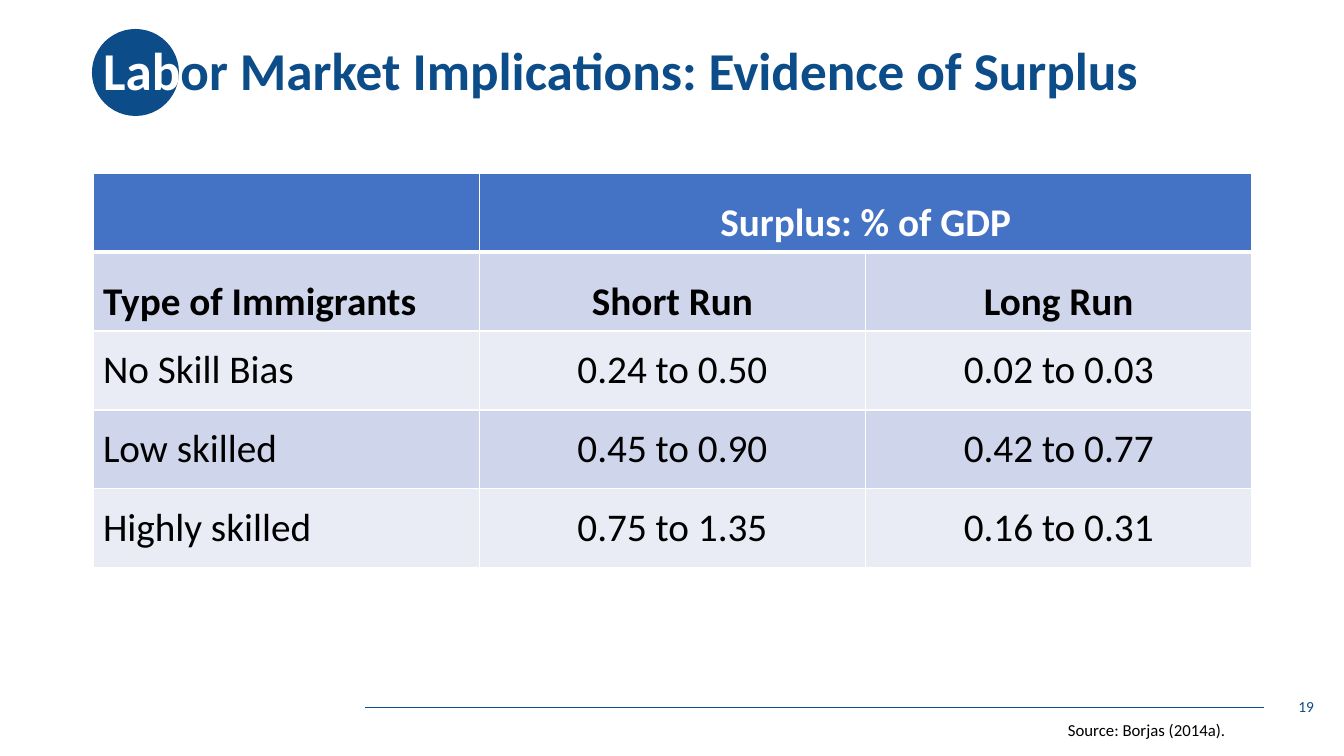
from pptx import Presentation
from pptx import util as u
from pptx.dml.color import RGBColor
from pptx.enum import shapes, text
from pptx.oxml import parse_xml
from pptx.oxml import ns

SCALE = 914400 / 100.8  # EMU per px
FONT = "Calibri"
NAVY = RGBColor(0x0C, 0x4C, 0x88)
HEADER_BLUE = RGBColor(0x44, 0x72, 0xC4)
BAND_DARK = RGBColor(0xCF, 0xD5, 0xEA)
BAND_LIGHT = RGBColor(0xE9, 0xEB, 0xF5)
WHITE = RGBColor(0xFF, 0xFF, 0xFF)
BLACK = RGBColor(0, 0, 0)

ROWS = [
    ["", "Surplus: % of GDP", ""],
    ["Type of Immigrants", "Short Run", "Long Run"],
    ["No Skill Bias", "0.24 to 0.50", "0.02 to 0.03"],
    ["Low skilled", "0.45 to 0.90", "0.42 to 0.77"],
    ["Highly skilled", "0.75 to 1.35", "0.16 to 0.31"],
]


def px(*lengths):
    return [u.Emu(round(length * SCALE)) for length in lengths]


def style(font, size, color, bold=False):
    font.name, font.size, font.bold = FONT, u.Pt(size), bold
    font.color.rgb = color


def add_title(slide, left, top, width, height):
    # Disc behind the first letters
    disc = slide.shapes.add_shape(
        shapes.MSO_SHAPE.OVAL, *px(left - 1, top + 29, 87, 87))
    disc.shadow.inherit = False
    disc.fill.solid()
    disc.fill.fore_color.rgb = NAVY
    disc.line.fill.background()

    # Title, moved in front of the disc
    title = slide.shapes.title
    title.left, title.top, title.width, title.height = px(left, top, width, height)
    disc._element.addnext(title._element)
    frame = title.text_frame
    frame.auto_size = text.MSO_AUTO_SIZE.NONE
    frame.vertical_anchor = text.MSO_ANCHOR.MIDDLE
    paragraph = frame.paragraphs[0]
    paragraph.alignment = text.PP_ALIGN.LEFT
    paragraph.line_spacing = 0.9
    for words, color in [("Lab", WHITE),
                         ("or Market Implications: Evidence of Surplus", NAVY)]:
        run = paragraph.add_run()
        run.text = words
        style(run.font, 38, color, True)


def set_borders(cell, bottom_points):
    properties = cell._tc.get_or_add_tcPr()
    for side, points in [("L", 1), ("R", 1), ("T", 1), ("B", bottom_points)]:
        properties.append(parse_xml(
            f'<a:ln{side} {ns.nsdecls("a")} w="{u.Pt(points)}"><a:solidFill>'
            f'<a:srgbClr val="{WHITE}"/></a:solidFill></a:ln{side}>'))


def add_surplus_table(slide, left, top, width, height):
    frame = slide.shapes.add_table(
        len(ROWS), len(ROWS[0]), *px(left, top, width, height))
    table = frame.table
    for row_index, row in enumerate(ROWS):
        header = row_index == 0
        heading = row_index < 2
        band = BAND_DARK if row_index % 2 else BAND_LIGHT
        for column_index, words in enumerate(row):
            cell = table.cell(row_index, column_index)
            set_borders(cell, 3 if header else 1)
            cell.fill.solid()
            cell.fill.fore_color.rgb = HEADER_BLUE if header else band
            cell.vertical_anchor = (
                text.MSO_ANCHOR.BOTTOM if heading else text.MSO_ANCHOR.MIDDLE)
            cell.text = words
            paragraph = cell.text_frame.paragraphs[0]
            paragraph.alignment = (
                text.PP_ALIGN.CENTER if column_index else text.PP_ALIGN.LEFT)
            style(paragraph.font, 28, WHITE if header else BLACK, heading)
            for run in paragraph.runs:
                style(run.font, 28, WHITE if header else BLACK, heading)
    table.cell(0, 1).merge(table.cell(0, 2))


def add_label(slide, box, words, size, color, alignment, anchor):
    label = slide.shapes.add_textbox(*px(*box))
    frame = label.text_frame
    frame.word_wrap = True
    frame.vertical_anchor = anchor
    frame.text = words
    paragraph = frame.paragraphs[0]
    paragraph.alignment = alignment
    style(paragraph.runs[0].font, size, color)


def add_footer(slide, left, top, width):
    # Rule
    rule = slide.shapes.add_connector(
        shapes.MSO_CONNECTOR.STRAIGHT, *px(left, top, left + width, top))
    rule.line.color.rgb = NAVY
    rule.line.width = u.Pt(0.5)
    rule._element.spPr.append(parse_xml(f'<a:effectLst {ns.nsdecls("a")}/>'))

    # Page number and source
    add_label(slide, (left + 657, top - 21, 302, 40), "19", 11, NAVY,
              text.PP_ALIGN.RIGHT, text.MSO_ANCHOR.MIDDLE)
    add_label(slide, (left + 693, top + 8, 194, 30), "Source: Borjas (2014a).",
              12, BLACK, text.PP_ALIGN.LEFT, text.MSO_ANCHOR.TOP)


def main():
    presentation = Presentation()
    presentation.slide_width, presentation.slide_height = px(1344, 756)
    slide = presentation.slides.add_slide(presentation.slide_layouts[5])
    add_title(slide, 93, 0, 1159, 146)
    add_surplus_table(slide, 93, 173, 1159, 395)
    add_footer(slide, 365, 707, 899)
    presentation.save("out.pptx")


if __name__ == "__main__":
    main()
